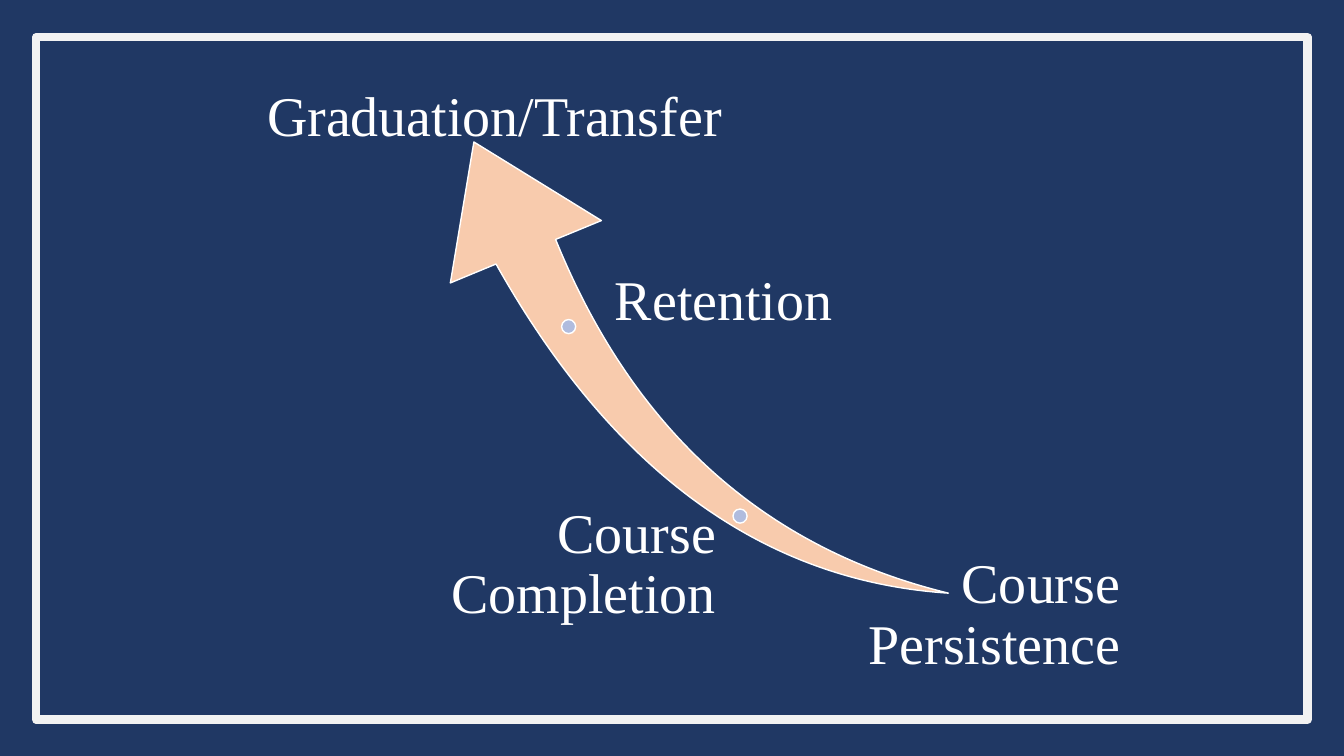
from pptx import Presentation
from pptx.dml.color import RGBColor
from pptx.enum.shapes import MSO_SHAPE
from pptx.enum.text import MSO_ANCHOR, PP_ALIGN
from pptx.util import Inches, Pt

NAVY = RGBColor(0x20, 0x38, 0x64)
PALE_GRAY = RGBColor(0xF2, 0xF2, 0xF2)
PEACH = RGBColor(0xF8, 0xCB, 0xAD)
LAVENDER = RGBColor(0xB0, 0xBC, 0xDE)
WHITE = RGBColor(0xFF, 0xFF, 0xFF)

deck = Presentation()
deck.slide_width = Inches(13.33)
deck.slide_height = Inches(7.5)
page = deck.slides.add_slide(deck.slide_layouts[6])
page.background.fill.solid()
page.background.fill.fore_color.rgb = NAVY


def add_figure(kind, bounds, fill, line, weight):
    figure = page.shapes.add_shape(kind, *map(Inches, bounds))
    figure.shadow.inherit = False
    figure.fill.solid()
    figure.fill.fore_color.rgb = fill
    figure.line.color.rgb = line
    figure.line.width = Pt(weight)
    return figure


add_figure(MSO_SHAPE.RECTANGLE, (0.36, 0.37, 12.61, 6.77), NAVY, PALE_GRAY, 6)

arrow = add_figure(MSO_SHAPE.SWOOSH_ARROW, (3.96, 1.78, 5.6, 3.9), PEACH, WHITE, 1)
arrow.rotation = 254
arrow.adjustments[0] = 0.163
arrow.adjustments[1] = 0.314

DOT_SIZE = 0.14
for left, top in [(7.27, 5.05), (5.57, 3.17)]:
    add_figure(MSO_SHAPE.OVAL, (left, top, DOT_SIZE, DOT_SIZE), LAVENDER, WHITE, 1)

LABEL_HEIGHT = 1.04
milestones = [
    ("Graduation/Transfer", 0.98, 0.49, 7.85, MSO_ANCHOR.BOTTOM, PP_ALIGN.CENTER),
    ("Retention", 6.04, 2.48, 3.64, MSO_ANCHOR.MIDDLE, PP_ALIGN.LEFT),
    ("Course Persistence", 7.6, 5.59, 3.57, MSO_ANCHOR.MIDDLE, PP_ALIGN.RIGHT),
    ("Course Completion", 3.59, 4.95, 3.57, MSO_ANCHOR.TOP, PP_ALIGN.RIGHT),
]
for text, left, top, width, anchor, alignment in milestones:
    box = page.shapes.add_textbox(*map(Inches, (left, top, width, LABEL_HEIGHT)))
    frame = box.text_frame
    frame.word_wrap = True
    frame.vertical_anchor = anchor
    frame.margin_left = frame.margin_right = Inches(0.06)
    frame.margin_top = frame.margin_bottom = Inches(0.06)
    para = frame.paragraphs[0]
    para.alignment = alignment
    para.line_spacing = 0.9
    span = para.add_run()
    span.text = text
    span.font.name = "Times New Roman"
    span.font.size = Pt(40)
    span.font.color.rgb = WHITE

deck.save("out.pptx")
